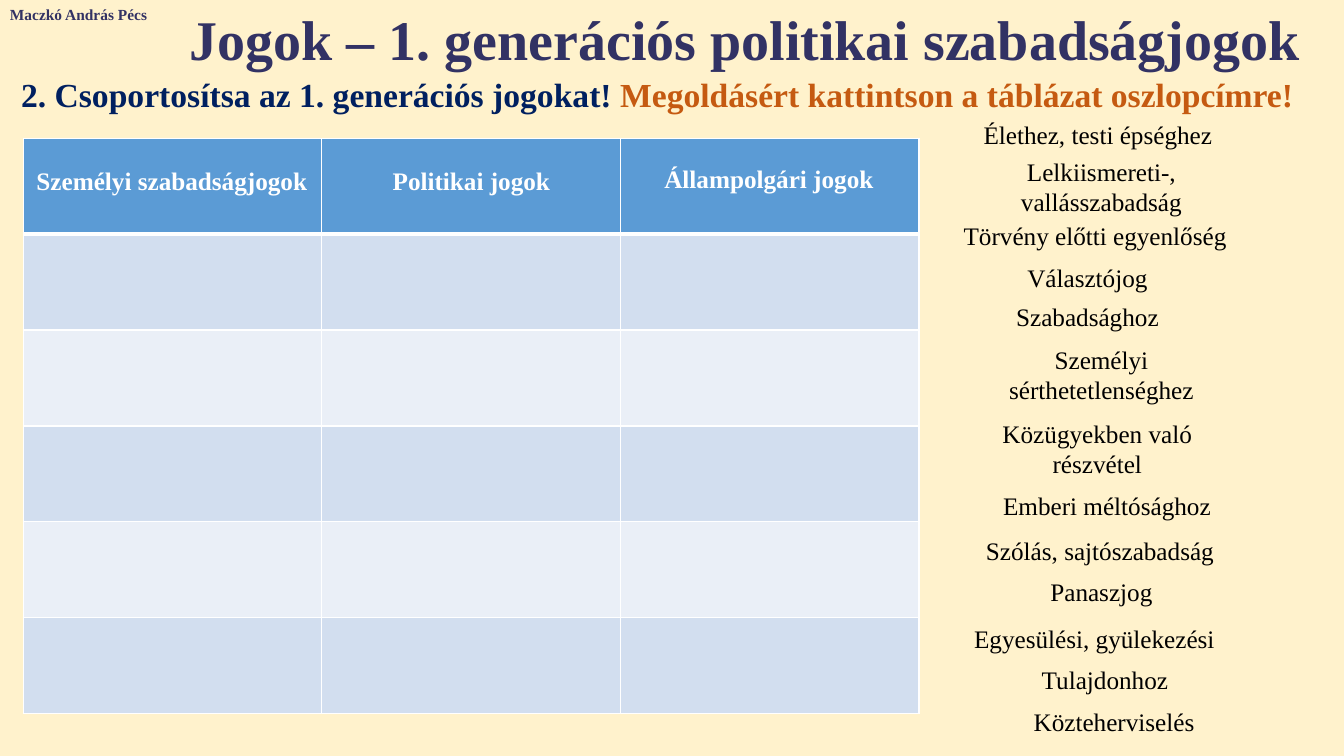
from dataclasses import dataclass
from lxml import etree
from pptx import Presentation
from pptx.dml.color import RGBColor
from pptx.enum.text import PP_ALIGN
from pptx.oxml.ns import qn
from pptx.util import Pt

LEFT, CENTER = PP_ALIGN.LEFT, PP_ALIGN.CENTER


@dataclass(frozen=True)
class Theme:
    font: str = "Times New Roman"
    back: str = "FFF2CC"
    title: str = "323264"
    task: str = "002060"
    hint: str = "C55A11"
    ink: str = "000000"
    white: str = "FFFFFF"
    head: str = "5B9BD5"
    bands: tuple = ("D2DEEF", "EAEFF7")
    small: int = 11
    body: int = 18
    mid: int = 24
    big: int = 40


theme = Theme()


def add_text(box, runs, size, bold=False, align=CENTER):
    """Place a text box at box; runs holds (text, colour) pairs."""
    frame = slide.shapes.add_textbox(*map(Pt, box)).text_frame
    frame.word_wrap = True
    para = frame.paragraphs[0]
    para.alignment = align
    for text, color in runs:
        run = para.add_run()
        run.text = text
        run.font.name = theme.font
        run.font.size = Pt(size)
        run.font.bold = bold
        run.font.color.rgb = RGBColor.from_string(color)


def add_edge(cell, side, width):
    """Draw a white border on one side of a cell: L, R, T or B."""
    line = etree.SubElement(cell._tc.get_or_add_tcPr(), qn(f"a:ln{side}"), w=str(Pt(width)))
    fill = etree.SubElement(line, qn("a:solidFill"))
    etree.SubElement(fill, qn("a:srgbClr"), val=theme.white)


prs = Presentation()
prs.slide_width, prs.slide_height = Pt(960), Pt(540)
slide = prs.slides.add_slide(prs.slide_layouts[6])
slide.background.fill.solid()
slide.background.fill.fore_color.rgb = RGBColor.from_string(theme.back)

# Headings
add_text((0, 0, 115, 21), [("Maczkó András Pécs", theme.title)], theme.small, True, LEFT)
add_text((8, 49.5, 947, 36), [
    ("2. Csoportosítsa az 1. generációs jogokat! ", theme.task),
    ("Megoldásért kattintson a táblázat oszlopcímre!", theme.hint),
], theme.mid, True, LEFT)
add_text((112.5, 0, 839, 55.5), [
    ("Jogok – 1. generációs politikai szabadságjogok", theme.title),
], theme.big, True)

# Sorting table
rows, cols = 6, 3
frame = slide.shapes.add_table(rows, cols, Pt(16.5), Pt(98.8), Pt(640), Pt(411))
table = frame.table
for r in range(rows):
    for c in range(cols):
        cell = table.cell(r, c)
        top = 3 if r == 1 else 1
        base = 3 if r == 0 else 1
        for side, width in (("L", 1), ("R", 1), ("T", top), ("B", base)):
            add_edge(cell, side, width)
        color = theme.bands[(r - 1) % 2] if r else theme.head
        cell.fill.solid()
        cell.fill.fore_color.rgb = RGBColor.from_string(color)

# Rights to sort
wide, tall = 209.5, 29
rights = [
    (679.5, 82, "Élethez, testi épséghez"),
    (682, 108, "Lelkiismereti-, vallásszabadság"),
    (677.5, 154, "Törvény előtti egyenlőség"),
    (672, 183.5, "Választójog"),
    (672, 211.5, "Szabadsághoz"),
    (682, 242.5, "Személyi sérthetetlenséghez"),
    (679, 295, "Közügyekben való részvétel"),
    (686, 346.5, "Emberi méltósághoz"),
    (681, 378.5, "Szólás, sajtószabadság"),
    (682, 408, "Panaszjog"),
    (677, 441.5, "Egyesülési, gyülekezési"),
    (684.5, 471, "Tulajdonhoz"),
    (691, 501, "Közteherviselés"),
]
for x, y, text in rights:
    high = 51 if text.startswith(("Lelki", "Személyi", "Közügy")) else tall
    add_text((x, y, wide, high), [(text, theme.ink)], theme.body)

# Column titles
heads = [
    (18, 114.5, "Személyi szabadságjogok"),
    (232, 114.5, "Politikai jogok"),
    (444.5, 113, "Állampolgári jogok"),
]
for x, y, text in heads:
    add_text((x, y, wide, tall), [(text, theme.white)], theme.body, True)

prs.save("out.pptx")
